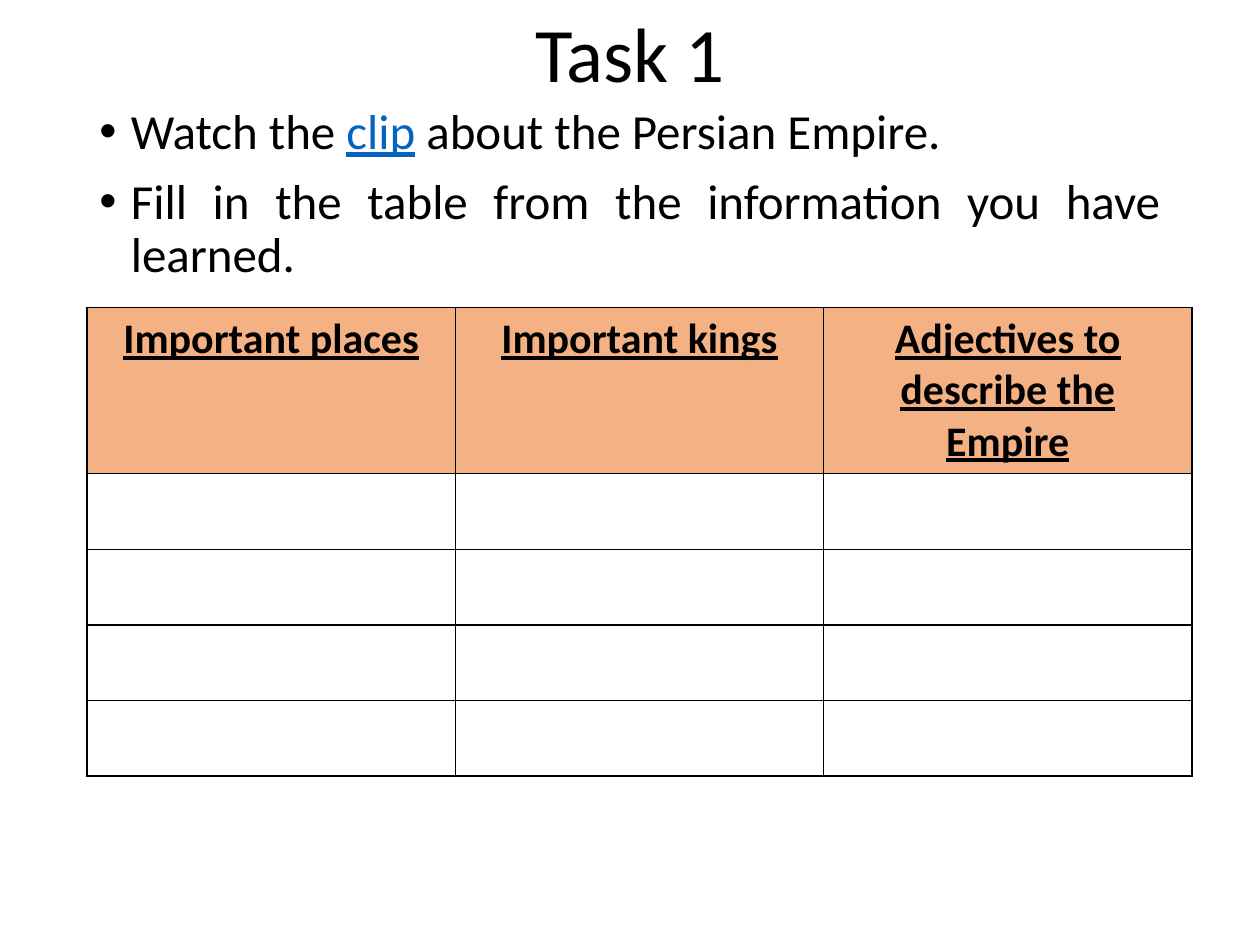
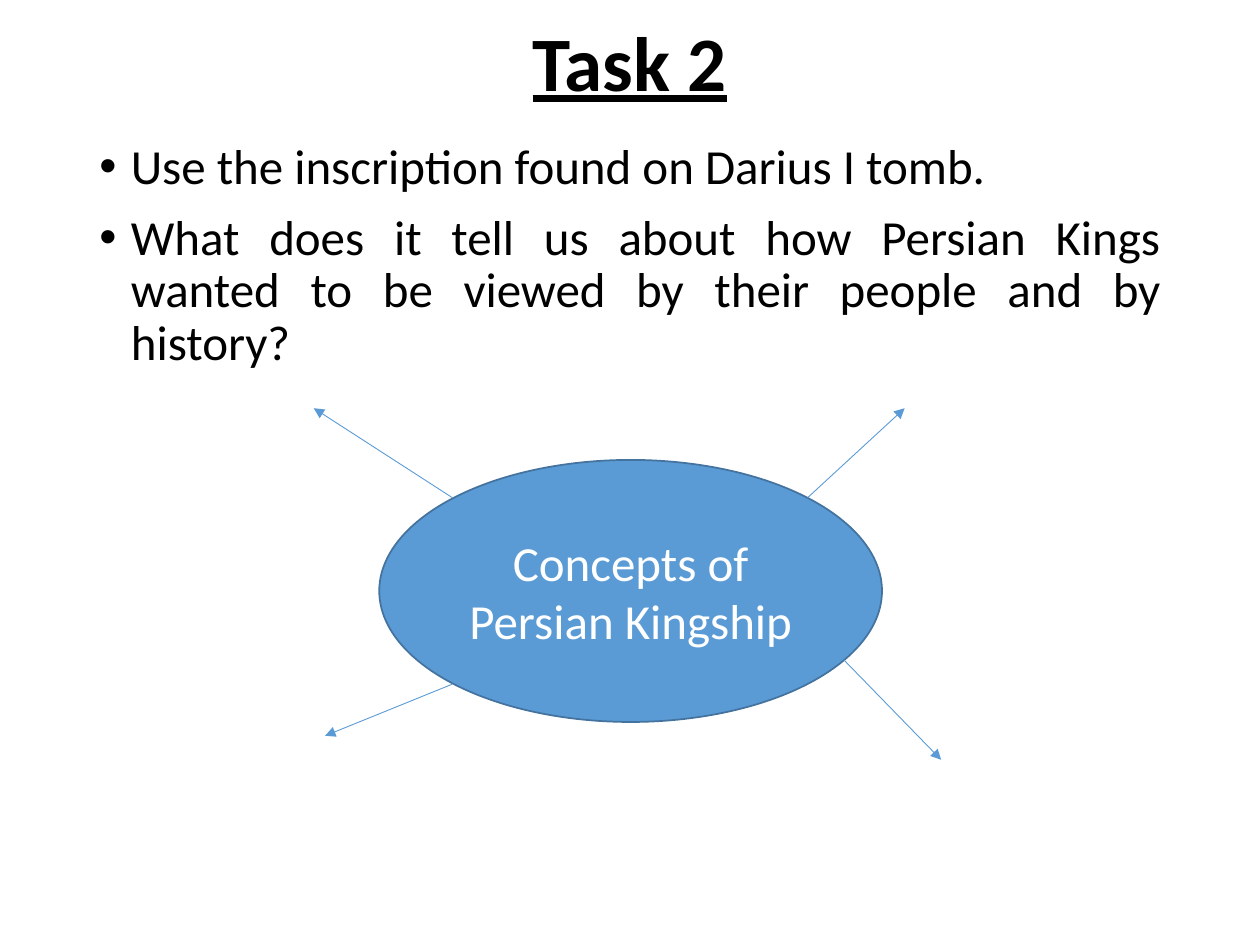
from lxml import etree
from pptx import Presentation
from pptx.dml.color import RGBColor
from pptx.enum.shapes import MSO_CONNECTOR, MSO_SHAPE
from pptx.enum.text import MSO_ANCHOR, PP_ALIGN
from pptx.oxml.ns import qn
from pptx.util import Inches, Pt

CENTER, JUSTIFY, LEFT = PP_ALIGN.CENTER, PP_ALIGN.JUSTIFY, PP_ALIGN.LEFT
TOP, MIDDLE = MSO_ANCHOR.TOP, MSO_ANCHOR.MIDDLE
ELLIPSE, STRAIGHT = MSO_SHAPE.OVAL, MSO_CONNECTOR.STRAIGHT

FONT = "Calibri"
BLACK, WHITE, LINK_BLUE = "000000", "FFFFFF", "0563C1"
HEADER_ORANGE, BLUE, DARK_BLUE = "F4B183", "5B9BD5", "43739E"
MARGIN, CONTENT_WIDTH = 0.69, 8.62


def color(hex_string):
    """Turn a hex string into a colour."""
    return RGBColor.from_string(hex_string)


def add_xml(parent, tag, **attributes):
    """Append a DrawingML element and return it."""
    return etree.SubElement(parent, qn(tag), attributes)


def add_text(paragraph, text, size=28, fill=BLACK, bold=False, underline=False):
    """Add one formatted run to a paragraph."""
    run = paragraph.add_run()
    run.text = text
    font = run.font
    font.name, font.size, font.bold, font.underline = FONT, Pt(size), bold, underline
    font.color.rgb = color(fill)


def add_text_box(slide, left, top, width, height, anchor=TOP):
    """Add a wrapping text box and return its text frame."""
    box = slide.shapes.add_textbox(Inches(left), Inches(top), Inches(width), Inches(height))
    frame = box.text_frame
    frame.word_wrap = True
    frame.vertical_anchor = anchor
    return frame


def add_title(slide, text, top, **style):
    """Add the centred slide title."""
    paragraph = add_text_box(slide, MARGIN, top, CONTENT_WIDTH, 1.45, MIDDLE).paragraphs[0]
    paragraph.alignment, paragraph.line_spacing = CENTER, 0.9
    add_text(paragraph, text, size=44, **style)


def add_instructions(slide, top, height, items):
    """Add bullets, each given as a list of text and format pairs."""
    frame = add_text_box(slide, MARGIN, top, CONTENT_WIDTH, height)
    for index, runs in enumerate(items):
        paragraph = frame.add_paragraph() if index else frame.paragraphs[0]
        properties = paragraph._p.get_or_add_pPr()
        properties.set("marL", str(Inches(0.25)))
        properties.set("indent", str(Inches(-0.25)))
        add_xml(properties, "a:buFont", typeface="Arial")
        add_xml(properties, "a:buChar", char="•")
        paragraph.line_spacing = 0.9
        paragraph.alignment = JUSTIFY if index else LEFT
        if index:
            paragraph.space_before = Pt(10)
        for text, style in runs:
            add_text(paragraph, text, **style)


def add_cell_borders(cell):
    """Draw a thin black line on every side of a cell."""
    properties = cell._tc.get_or_add_tcPr()
    for side in ("a:lnL", "a:lnR", "a:lnT", "a:lnB"):
        line = add_xml(properties, side, w=str(Pt(1)))
        add_xml(add_xml(line, "a:solidFill"), "a:srgbClr", val=BLACK)


def add_answer_table(slide, left, top, width, headings, blank_rows):
    """Add a table with a heading row and empty rows to fill in."""
    header_height, row_height = 1.32, 0.6
    height = header_height + blank_rows * row_height
    table = slide.shapes.add_table(blank_rows + 1, len(headings), Inches(left), Inches(top),
                                   Inches(width), Inches(height)).table
    for row_index, row in enumerate(table.rows):
        row.height = Inches(row_height if row_index else header_height)
        for cell, heading in zip(row.cells, headings):
            add_cell_borders(cell)
            if row_index:
                cell.fill.background()
                continue
            cell.fill.solid()
            cell.fill.fore_color.rgb = color(HEADER_ORANGE)
            paragraph = cell.text_frame.paragraphs[0]
            paragraph.alignment = CENTER
            add_text(paragraph, heading, size=24, bold=True, underline=True)


def add_arrow(slide, start, end):
    """Add a thin arrow between two points."""
    arrow = slide.shapes.add_connector(STRAIGHT, *map(Inches, start + end))
    arrow.line.color.rgb = color(BLUE)
    arrow.line.width = Pt(0.5)
    add_xml(arrow.line._get_or_add_ln(), "a:tailEnd", type="triangle")
    add_xml(arrow._element.spPr, "a:effectLst")


def add_concept_map(slide, left, top, width, height, topic, arrows):
    """Add a topic ellipse with arrows placed relative to its box."""
    ellipse = slide.shapes.add_shape(ELLIPSE, Inches(left), Inches(top),
                                     Inches(width), Inches(height))
    ellipse.shadow.inherit = False
    ellipse.fill.solid()
    ellipse.fill.fore_color.rgb = color(BLUE)
    ellipse.line.color.rgb = color(DARK_BLUE)
    ellipse.line.width = Pt(1)
    frame = ellipse.text_frame
    frame.word_wrap, frame.vertical_anchor = True, MIDDLE
    frame.paragraphs[0].alignment = CENTER
    add_text(frame.paragraphs[0], topic, fill=WHITE)
    for points in arrows:
        start, end = [(left + x, top + y) for x, y in points]
        add_arrow(slide, start, end)


def build_table_task(slide):
    """Build the task with a table to complete."""
    add_title(slide, "Task 1", -0.27)
    add_instructions(slide, 0.8, 1.55, [
        [("Watch the ", {}), ("clip", {"fill": LINK_BLUE, "underline": True}),
         (" about the Persian Empire.", {})],
        [("Fill in the table from the information you have learned.", {})],
    ])
    add_answer_table(slide, MARGIN, 2.44, 8.77,
                     ["Important places", "Important kings", "Adjectives to describe the Empire"], 4)


def build_concept_task(slide):
    """Build the task with a concept map."""
    add_title(slide, "Task 2", -0.2, bold=True, underline=True)
    add_instructions(slide, 1.08, 2, [
        [("Use the inscription found on Darius I tomb.", {})],
        [("What does it tell us about how Persian Kings wanted to be viewed by their people "
          "and by history?", {})],
    ])
    add_concept_map(slide, 3.01, 3.65, 3.99, 2.08, "Concepts of Persian Kingship", [
        ((3.4, 0.3), (4.17, -0.41)),
        ((3.69, 1.59), (4.46, 2.38)),
        ((0.58, 0.3), (-0.52, -0.41)),
        ((0.58, 1.78), (-0.43, 2.19)),
    ])


def main():
    """Build and save the presentation."""
    presentation = Presentation()
    presentation.slide_width, presentation.slide_height = Inches(10), Inches(7.5)
    blank_layout = presentation.slide_layouts[6]
    for build in (build_table_task, build_concept_task):
        build(presentation.slides.add_slide(blank_layout))
    presentation.save("out.pptx")


if __name__ == "__main__":
    main()
